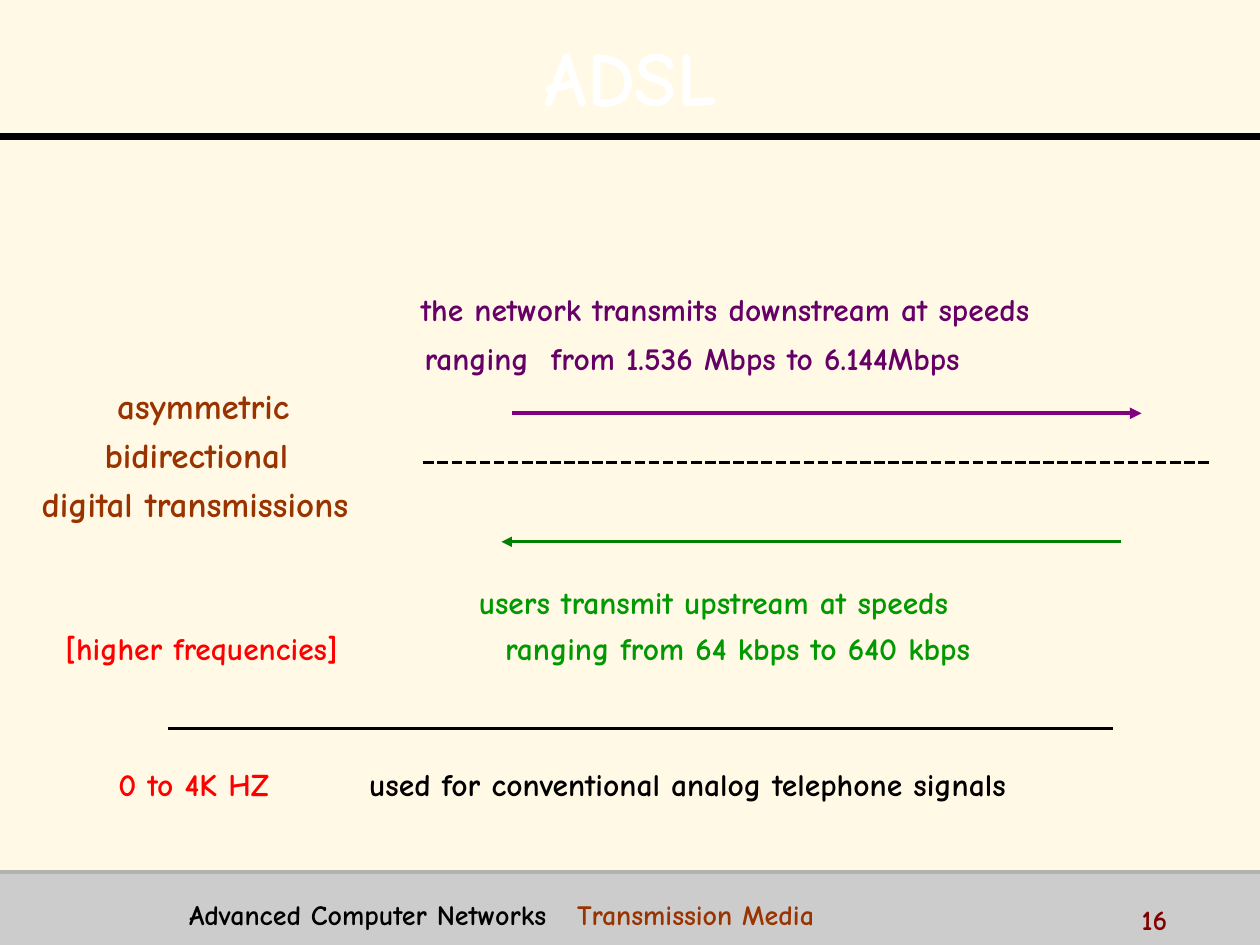
from lxml import etree
from pptx import Presentation
from pptx.dml.color import RGBColor
from pptx.enum.dml import MSO_LINE
from pptx.enum.shapes import MSO_CONNECTOR, MSO_SHAPE
from pptx.enum.text import MSO_ANCHOR, PP_ALIGN
from pptx.oxml.ns import qn
from pptx.util import Inches, Pt

FONT = "Comic Neue"
COLORS = {
    "cream": "FFF9E6", "band": "CCCCCC", "gray": "B2B2B2", "black": "000000",
    "white": "FFFFFF", "plum": "660066", "purple": "800080", "rust": "993300",
    "green": "009900", "dark green": "008000", "red": "FF0000", "maroon": "800000",
}

# Text lines: text, left, vertical centre, size, colour
LABELS = [
    ("the network transmits downstream at speeds", 3.34, 2.45, 18, "plum"),
    ("ranging  from 1.536 Mbps to 6.144Mbps", 3.37, 2.84, 18, "plum"),
    ("asymmetric", 0.93, 3.22, 20, "rust"),
    ("bidirectional", 0.83, 3.61, 20, "rust"),
    ("digital transmissions", 0.33, 4.0, 20, "rust"),
    ("users transmit upstream at speeds", 3.8, 4.78, 18, "green"),
    ("[higher frequencies]", 0.52, 5.14, 18, "red"),
    ("ranging from 64 kbps to 640 kbps", 4.01, 5.14, 18, "green"),
    ("0 to 4K HZ", 0.94, 6.22, 18, "red"),
    ("used for conventional analog telephone signals", 2.93, 6.22, 18, "black"),
    ("Advanced Computer Networks", 1.5, 7.26, 16, "black"),
    ("Transmission Media", 4.58, 7.26, 16, "rust"),
    ("16", 9.06, 7.3, 16, "maroon"),
]

# Horizontal lines: start x, end x, y, colour, width, dashed, arrow
LINES = [
    (0, 10, 1.08, "black", 4, False, False),
    (0, 10, 6.92, "gray", 2, False, False),
    (1.33, 8.83, 5.78, "black", 2, False, False),
    (8.9, 3.98, 4.3, "dark green", 1.75, False, True),
    (3.36, 9.61, 3.67, "black", 2, True, False),
    (4.06, 9.06, 3.28, "purple", 2.25, False, True),
]


def rgb(name):
    return RGBColor.from_string(COLORS[name])


def add_text(slide, text, box, size, color):
    tf = slide.shapes.add_textbox(*map(Inches, box)).text_frame
    tf.word_wrap = True
    tf.vertical_anchor = MSO_ANCHOR.MIDDLE
    tf.margin_left = tf.margin_right = tf.margin_top = tf.margin_bottom = 0
    p = tf.paragraphs[0]
    r = p.add_run()
    r.text = text
    r.font.name, r.font.size, r.font.bold = FONT, Pt(size), True
    r.font.color.rgb = rgb(color)
    return p, r


def add_line(slide, x1, x2, y, color, width, dashed, arrow):
    line = slide.shapes.add_connector(
        MSO_CONNECTOR.STRAIGHT, Inches(x1), Inches(y), Inches(x2), Inches(y))
    line.line.color.rgb = rgb(color)
    line.line.width = Pt(width)
    if dashed:
        line.line.dash_style = MSO_LINE.SQUARE_DOT
    if arrow:
        etree.SubElement(line.line._get_or_add_ln(), qn("a:tailEnd"), type="triangle")
    etree.SubElement(line._element.spPr, qn("a:effectLst"))


prs = Presentation()
prs.slide_width, prs.slide_height = Inches(10), Inches(7.5)
slide = prs.slides.add_slide(prs.slide_layouts[6])
slide.background.fill.solid()
slide.background.fill.fore_color.rgb = rgb("cream")

# Footer band
band = slide.shapes.add_shape(
    MSO_SHAPE.RECTANGLE, 0, Inches(6.92), Inches(10), Inches(0.58))
band.shadow.inherit = False
band.fill.solid()
band.fill.fore_color.rgb = rgb("band")
band.line.fill.background()

# Rules and arrows
for line in LINES:
    add_line(slide, *line)

# Title with a text shadow
p, r = add_text(slide, "ADSL", (0.2, 0.13, 9.61, 0.87), 44, "white")
p.alignment = PP_ALIGN.CENTER
p.line_spacing = 1.1
effects = etree.Element(qn("a:effectLst"))
shadow = etree.SubElement(effects, qn("a:outerShdw"), dist="35921", dir="2700000")
etree.SubElement(shadow, qn("a:srgbClr"), val=COLORS["black"])
r.font._element.find(qn("a:solidFill")).addnext(effects)

# Labels and footer text, each box centred on its line
HEIGHT = 0.36
for text, x, y, size, color in LABELS:
    width = min(6, 9.9 - x, 0.4 + len(text) * size / 120)
    add_text(slide, text, (x, y - HEIGHT / 2, width, HEIGHT), size, color)

prs.save("out.pptx")
